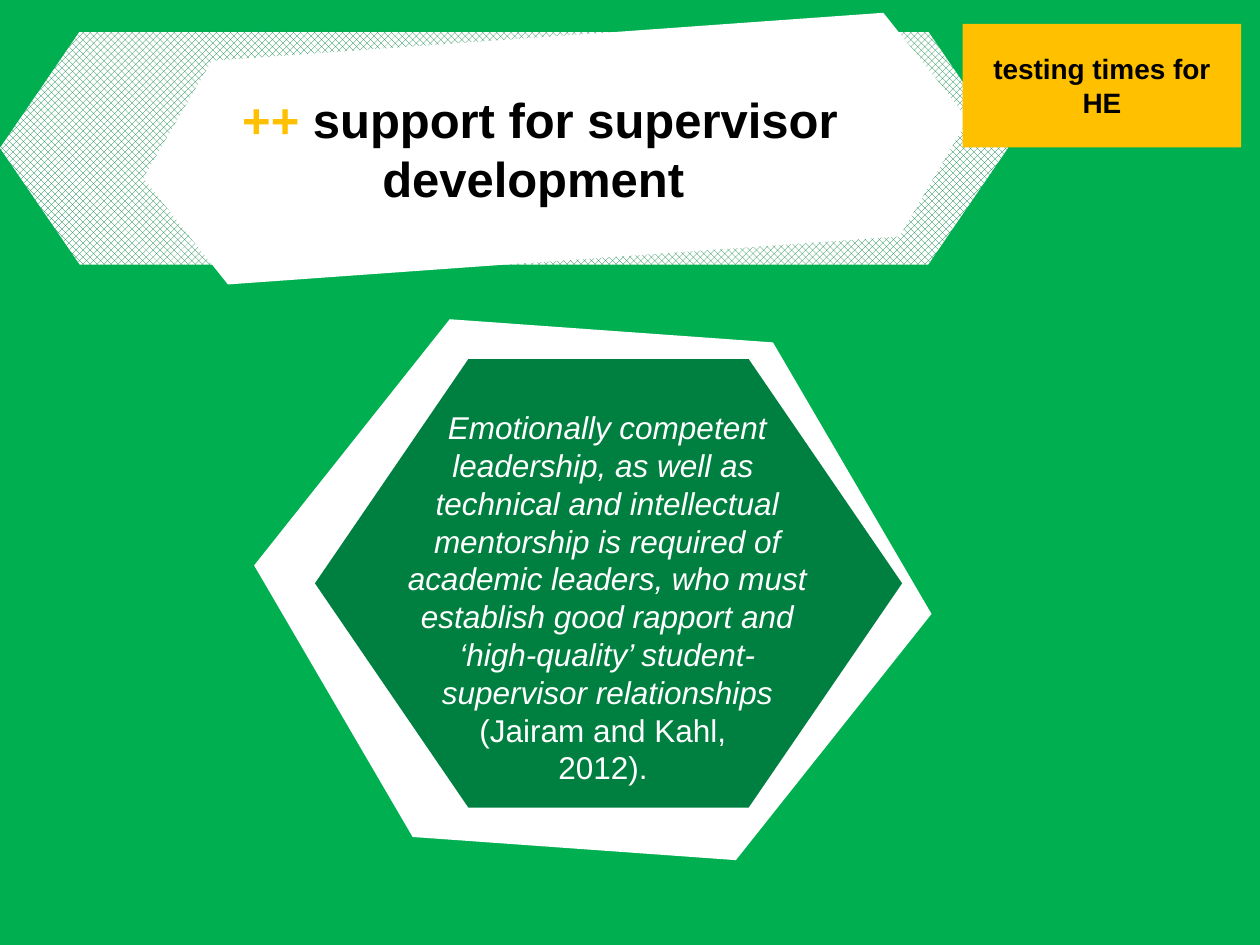
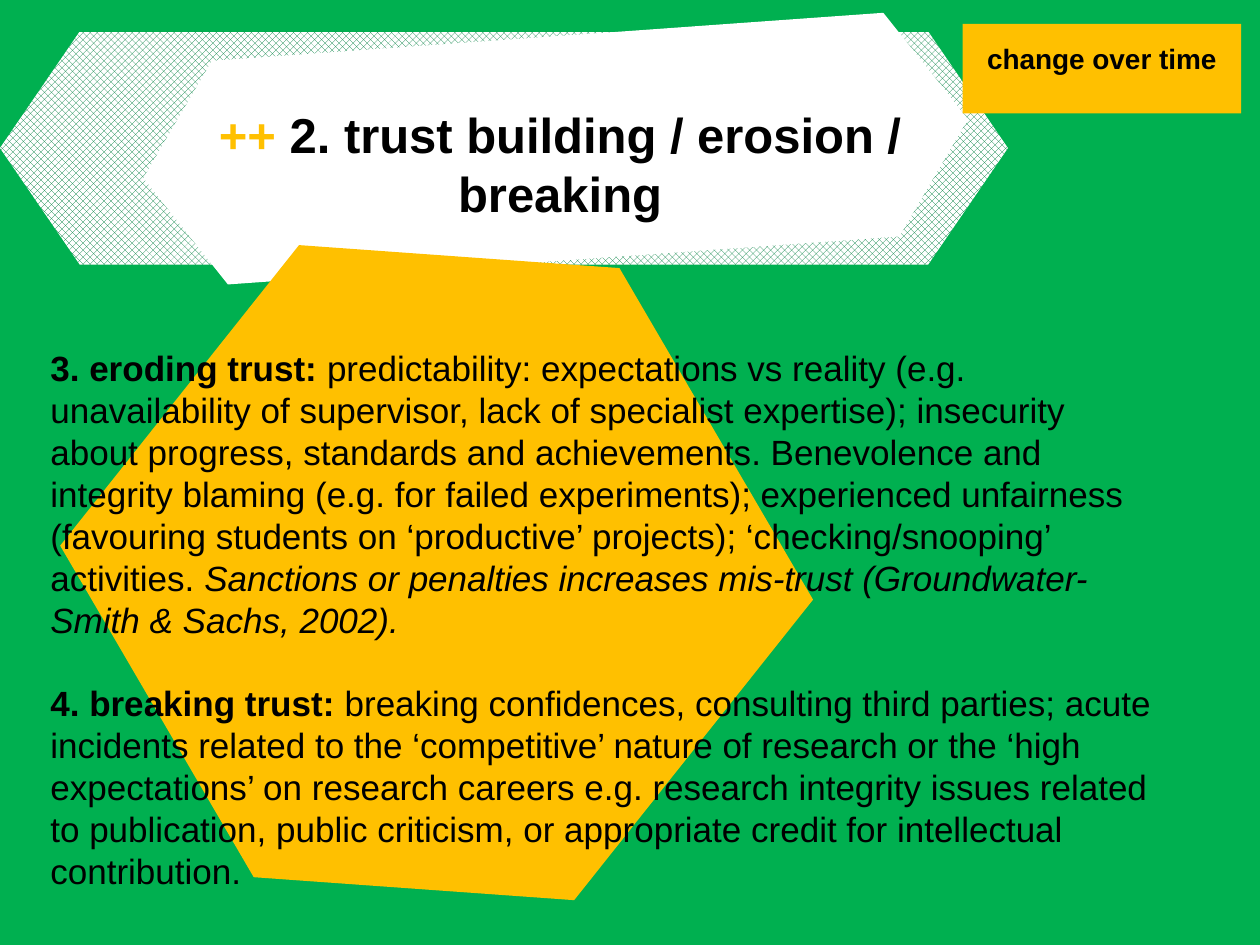
from pptx import Presentation
from pptx.dml.color import RGBColor
from pptx.enum.dml import MSO_PATTERN
from pptx.enum.shapes import MSO_SHAPE
from pptx.enum.text import MSO_ANCHOR, PP_ALIGN
from pptx.util import Inches, Pt

GREEN, DARK_GREEN, AMBER = "00B050", "008040", "FFC000"
WHITE, BLACK = "FFFFFF", "000000"
FONT = "Arial"


def rgb(value):
    """Turn a hex string into a colour."""
    return RGBColor.from_string(value)


def add_block(shapes, kind, box, color, rotation=0):
    """Add a solid shape without outline or shadow."""
    sp = shapes.add_shape(kind, *map(Inches, box))
    sp.shadow.inherit = False
    sp.line.fill.background()
    sp.fill.solid()
    sp.fill.fore_color.rgb = rgb(color)
    sp.rotation = rotation
    return sp


def add_hexagon(shapes, box, color, rotation=0):
    """Add a hexagon with the deck's side angle."""
    sp = add_block(shapes, MSO_SHAPE.HEXAGON, box, color, rotation)
    sp.adjustments[0] = 0.342
    return sp


def write(tf, paragraphs, size, color, align=PP_ALIGN.CENTER):
    """Fill a frame with paragraphs of (text, font settings) runs."""
    tf.word_wrap = True
    tf.vertical_anchor = MSO_ANCHOR.TOP
    for i, runs in enumerate(paragraphs):
        p = tf.add_paragraph() if i else tf.paragraphs[0]
        p.alignment = align
        p.font.name, p.font.size = FONT, Pt(size)
        p.font.color.rgb = rgb(color)
        for text, style in runs:
            r = p.add_run()
            r.text = text
            r.font.bold = style.get("bold")
            r.font.italic = style.get("italic")
            if "color" in style:
                r.font.color.rgb = rgb(style["color"])


def add_text(s, box, paragraphs, size, color, align=PP_ALIGN.CENTER):
    """Add a text box and return its frame."""
    tf = s.shapes.add_textbox(*map(Inches, box)).text_frame
    write(tf, paragraphs, size, color, align)
    return tf


def add_banner(s, x, y, w, h):
    """Draw the checked hexagon and the tilted white one over it."""
    shapes = s.shapes.add_group_shape().shapes
    fill = add_hexagon(shapes, (x, y, w, h), WHITE).fill
    fill.patterned()
    fill.pattern = MSO_PATTERN.LARGE_CHECKER_BOARD
    fill.fore_color.rgb = rgb(DARK_GREEN)
    fill.back_color.rgb = rgb(WHITE)
    add_hexagon(shapes, (x + 1.13, y + 0.04, w - 1.44, h - 0.07), WHITE, 355.9)


def add_tag(s, text, height, top_inset):
    """Draw the amber label in the top right corner."""
    sp = add_block(s.shapes, MSO_SHAPE.RECTANGLE, (7.64, 0.19, 2.21, height), AMBER)
    tf = sp.text_frame
    tf.margin_left = tf.margin_right = Inches(0.16)
    tf.margin_top, tf.margin_bottom = Inches(top_inset), Inches(0.22)
    write(tf, [[(text, {"bold": True})]], 16, BLACK)


def add_title(s, text, x, y):
    """Write the slide title after its amber plus signs."""
    runs = [("++ ", {"bold": True, "color": AMBER}), (text, {"bold": True})]
    add_text(s, (x, y, 6.49, 1.04), [runs], 28, BLACK)


def add_quote(s, x, y, w, h):
    """Draw the quotation in a green hexagon over a tilted white one."""
    shapes = s.shapes.add_group_shape().shapes
    add_hexagon(shapes, (x, y, w, h), WHITE, 4.1)
    add_hexagon(shapes, (x + 0.49, y + 0.23, w - 0.73, h - 0.56), DARK_GREEN)
    italic = {"italic": True}
    add_text(s, (x + 0.97, y + 0.57, w - 1.71, h - 0.99), [
        [("Emotionally competent leadership, as well as ", italic)],
        [("technical and intellectual mentorship is required of academic "
          "leaders, who must establish good rapport and ‘high-quality’ "
          "student-supervisor relationships ", italic),
         ("(Jairam and Kahl, ", {})],
        [("2012). ", {})],
    ], 18, WHITE)


def add_point(s, y, height, heading, *runs):
    """Write one indented point with a bold heading."""
    tf = add_text(s, (-0.2, y, 9.47, height), [[(heading, {"bold": True}), *runs]],
                  20, BLACK, PP_ALIGN.LEFT)
    tf.margin_left = Inches(0.6)


def new_slide(prs):
    """Add a green slide with the banner."""
    s = prs.slides.add_slide(prs.slide_layouts[6])
    s.background.fill.solid()
    s.background.fill.fore_color.rgb = rgb(GREEN)
    add_banner(s, 0, 0.25, 8, 1.85)
    return s


def build_support(prs):
    """Build the slide on support for supervisors."""
    s = new_slide(prs)
    add_tag(s, "testing times for HE", 0.98, 0.22)
    add_title(s, "support for supervisor development ", 1.04, 0.66)
    add_quote(s, 2.01, 2.62, 5.39, 4.12)


def build_trust(prs):
    """Build the slide on eroding and breaking trust."""
    s = new_slide(prs)
    add_tag(s, "change over time", 0.71, 0.14)
    add_title(s, "2. trust building / erosion / breaking", 1.2, 0.78)
    add_hexagon(s.shapes, (0.47, 2.03, 5.99, 5.03), AMBER, 4.1)
    add_point(
        s, 2.7, 2.52, "3. eroding trust: ",
        ("predictability: expectations vs reality (e.g. unavailability of "
         "supervisor, lack of specialist expertise); insecurity about progress, "
         "standards and achievements. Benevolence and integrity blaming (e.g. for "
         "failed experiments); experienced unfairness (favouring students on "
         "‘productive’ projects); ‘checking/snooping’ activities. ", {}),
        ("Sanctions or penalties increases mis-trust (Groundwater-Smith & Sachs, "
         "2002).", {"italic": True}))
    add_point(
        s, 5.36, 1.78, "4. breaking trust: ",
        ("breaking confidences, consulting third parties; acute incidents related "
         "to the ‘competitive’ nature of research or the ‘high expectations’ on "
         "research careers e.g. research integrity issues related to publication, "
         "public criticism, or appropriate credit for intellectual contribution.",
         {}))


def main():
    """Build and save the deck."""
    prs = Presentation()
    prs.slide_width, prs.slide_height = Inches(10), Inches(7.5)
    build_support(prs)
    build_trust(prs)
    prs.save("out.pptx")


if __name__ == "__main__":
    main()
